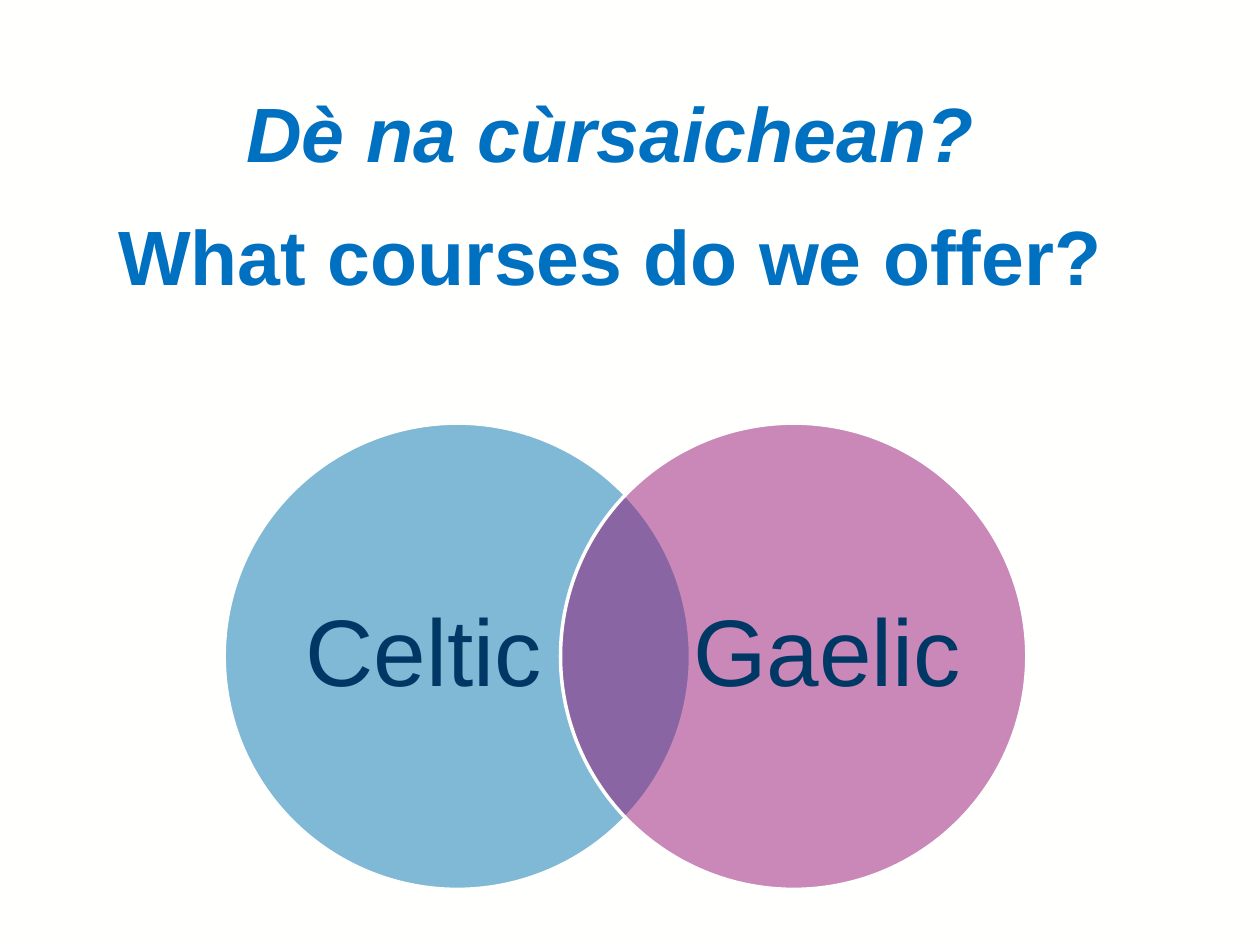
from dataclasses import dataclass

from lxml import etree
from pptx import Presentation
from pptx.dml.color import RGBColor
from pptx.enum import shapes, text
from pptx.oxml import ns
from pptx.util import Cm, Pt


@dataclass(frozen=True)
class Theme:
    font: str = "Arial"
    background: str = "FFFFFE"
    title: str = "0070C0"
    label: str = "003865"
    celtic: str = "0075B0"
    gaelic: str = "951272"
    title_size: int = 44
    label_size: int = 54
    outline: int = 2


THEME = Theme()


def rgb(value):
    return RGBColor.from_string(value)


def style_font(font, size, color):
    font.name = THEME.font
    font.size = Pt(size)
    font.color.rgb = rgb(color)


def place_title(slide, left, top, width, height):
    title = slide.shapes.title
    title.left, title.top = Cm(left), Cm(top)
    title.width, title.height = Cm(width), Cm(height)
    frame = title.text_frame
    frame.text = "Dè na cùrsaichean?\nWhat courses do we offer?"
    frame.word_wrap = True
    frame.auto_size = text.MSO_AUTO_SIZE.NONE
    frame.vertical_anchor = text.MSO_ANCHOR.TOP
    frame.margin_top = Cm(0.25)
    frame.margin_right = Cm(0.86)
    for line, italic in zip(frame.paragraphs, (True, False)):
        line.alignment = text.PP_ALIGN.CENTER
        line.line_spacing = 1.3
        line.space_before = Pt(0)
        line.space_after = Pt(2)
        for run in line.runs:
            style_font(run.font, THEME.title_size, THEME.title)
            run.font.bold = True
            run.font.italic = italic


def add_circle(slide, left, top, diameter, color):
    circle = slide.shapes.add_shape(
        shapes.MSO_SHAPE.OVAL, Cm(left), Cm(top), Cm(diameter), Cm(diameter))
    circle.shadow.inherit = False
    circle.fill.solid()
    circle.fill.fore_color.rgb = rgb(color)
    tint = circle.fill._xPr.find(".//" + ns.qn("a:srgbClr"))
    etree.SubElement(tint, ns.qn("a:alpha"), val="50000")
    circle.line.color.rgb = rgb(THEME.background)
    circle.line.width = Pt(THEME.outline)


def add_label(slide, left, top, width, height, wording):
    label = slide.shapes.add_textbox(Cm(left), Cm(top), Cm(width), Cm(height))
    frame = label.text_frame
    frame.text = wording
    frame.word_wrap = False
    frame.vertical_anchor = text.MSO_ANCHOR.MIDDLE
    frame.margin_left = frame.margin_right = 0
    frame.margin_top = frame.margin_bottom = 0
    line = frame.paragraphs[0]
    line.alignment = text.PP_ALIGN.CENTER
    line.line_spacing = 0.9
    style_font(line.runs[0].font, THEME.label_size, THEME.label)


def place_venn(slide, left, top, width, diameter):
    label_width, label_height, label_inset = 5.41, 7.19, 1.32
    label_top = top + (diameter - label_height) / 2
    right_circle = left + width - diameter
    right_label = left + width - label_inset - label_width
    for wording, color, circle_left, label_left in (
        ("Celtic", THEME.celtic, left, left + label_inset),
        ("Gaelic", THEME.gaelic, right_circle, right_label),
    ):
        add_circle(slide, circle_left, top, diameter, color)
        add_label(slide, label_left, label_top, label_width, label_height, wording)


def main():
    deck = Presentation()
    deck.slide_width, deck.slide_height = Cm(25.4), Cm(19.05)
    slide = deck.slides.add_slide(deck.slide_layouts[5])
    slide.background.fill.solid()
    slide.background.fill.fore_color.rgb = rgb(THEME.background)
    place_title(slide, 0.61, 0.91, 24, 16.61)
    place_venn(slide, 4.52, 8.53, 16.18, 9.4)
    deck.save("out.pptx")


if __name__ == "__main__":
    main()
